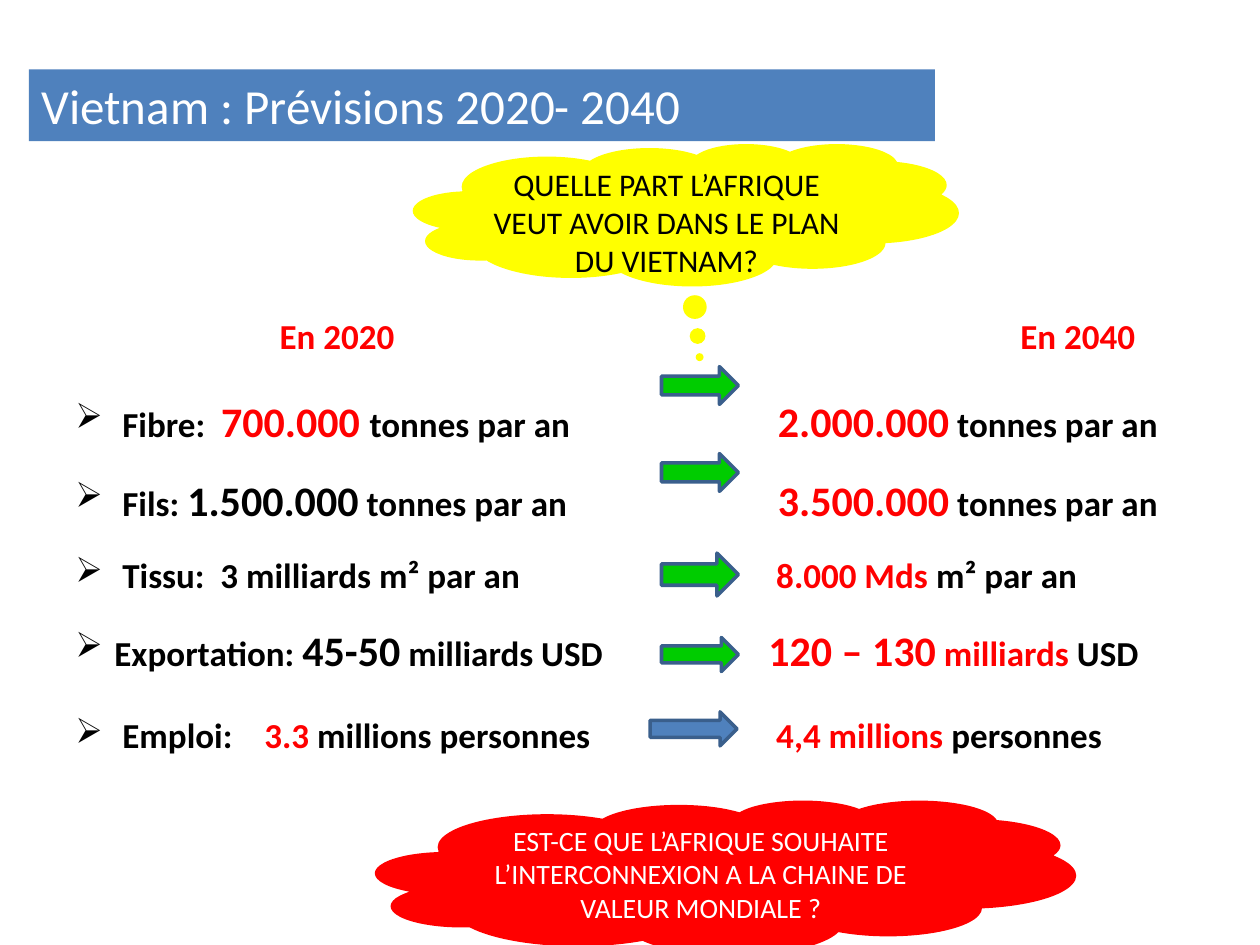
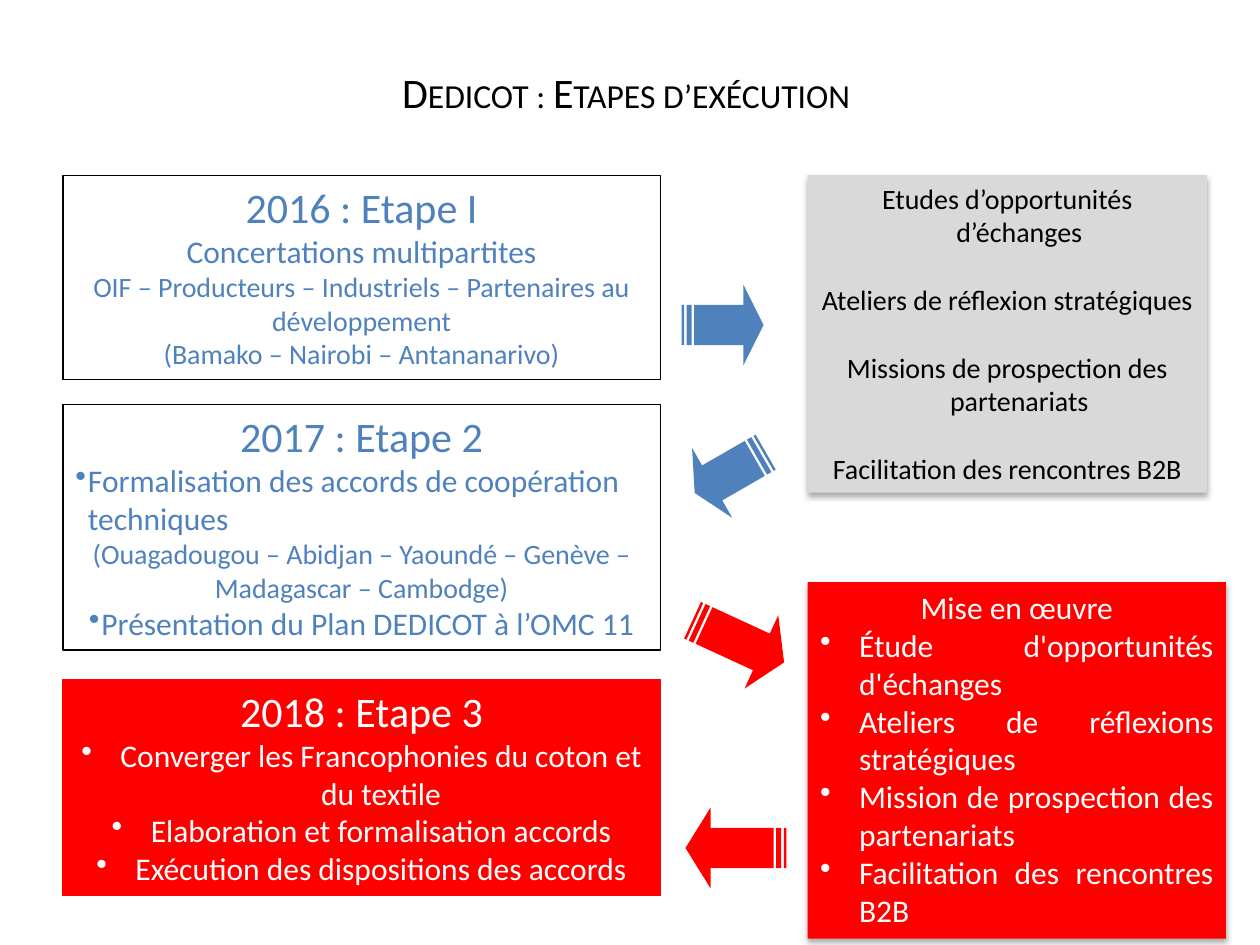
from dataclasses import dataclass

from lxml import etree
from pptx import Presentation
from pptx.dml.color import RGBColor
from pptx.enum.shapes import MSO_SHAPE
from pptx.enum.text import MSO_ANCHOR, MSO_AUTO_SIZE, PP_ALIGN
from pptx.oxml import ns
from pptx.util import Inches, Pt


@dataclass(frozen=True)
class Theme:
    font: str = "Calibri"
    black: str = "000000"
    white: str = "FFFFFF"
    red: str = "FF0000"
    blue: str = "4F81BD"
    outline: str = "3A5F8C"
    green: str = "00CC00"
    yellow: str = "FFFF00"
    grey: str = "D9D9D9"
    banner: int = 28
    heading: int = 24
    figure: int = 24
    row: int = 20
    body: int = 18
    detail: int = 16


THEME = Theme()
LEFT, CENTER, JUSTIFY = PP_ALIGN.LEFT, PP_ALIGN.CENTER, PP_ALIGN.JUSTIFY

# Forecast slide: runs are (text, colour, size)
B, R = THEME.black, THEME.red
ROW, FIGURE = THEME.row, THEME.figure
FORECAST_TITLE = "Vietnam : Prévisions 2020- 2040"
# Each column: place, year, indent of the year, format of its rows
YEAR_COLUMNS = [
    ((0, 2.39, 5.15, 3.71), "En 2020", 2.12, {"bullet": "➢", "indent": 0.81, "hanging": 0.31}),
    ((6, 2.39, 3.87, 3.71), "En 2040", 2, {}),
]
# Each row: space after, 2020 runs, 2040 runs
FORECASTS = [
    (12, [(" Fibre:  ", B, ROW), ("700.000 ", R, FIGURE), ("tonnes par an", B, ROW)],
     [(" 2.000.000", R, FIGURE), (" tonnes par an", B, ROW)]),
    (12, [(" Fils: ", B, ROW), ("1.500.000", B, FIGURE), (" tonnes par an", B, ROW)],
     [(" 3.500.000", R, FIGURE), (" tonnes par an", B, ROW)]),
    (12, [(" Tissu:  3 milliards m² par an", B, ROW)],
     [(" 8.000 Mds ", R, ROW), ("m² par an", B, ROW)]),
    (18, [("Exportation: ", B, ROW), ("45-50", B, FIGURE), (" milliards USD", B, ROW)],
     [("120 – 130", R, FIGURE), (" milliards ", R, ROW), ("USD", B, ROW)]),
    (18, [(" Emploi:\t", B, ROW), ("3.3", R, ROW), (" millions personnes", B, ROW)],
     [(" 4,4 millions ", R, ROW), ("personnes", B, ROW)]),
]
FORECAST_ARROWS = [
    ((5.25, 2.91, 0.61, 0.3), THEME.green),
    ((5.25, 3.6, 0.61, 0.3), THEME.green),
    ((5.25, 4.39, 0.61, 0.34), THEME.green),
    ((5.25, 5.06, 0.61, 0.27), THEME.green),
    ((5.16, 5.65, 0.69, 0.27), THEME.blue),
]
QUESTIONS = [
    (MSO_SHAPE.CLOUD_CALLOUT, (3.28, 1.14, 4.33, 1.13), THEME.yellow, THEME.black, THEME.body,
     "QUELLE PART L’AFRIQUE VEUT AVOIR DANS LE PLAN DU VIETNAM?", (0.025, 1.0)),
    (MSO_SHAPE.CLOUD, (2.98, 6.35, 5.56, 1.23), THEME.red, THEME.white, THEME.detail,
     "EST-CE QUE L’AFRIQUE SOUHAITE L’INTERCONNEXION A LA CHAINE DE VALEUR MONDIALE ?", ()),
]

# Steps slide: each paragraph is (text, format)
STEPS_TITLE = "Dedicot : Etapes d’exécution"
HEADING = {"size": THEME.heading, "align": CENTER}
BODY = {"size": THEME.body, "align": CENTER}
DETAIL = {"size": THEME.detail, "align": CENTER}
TIGHT_BULLET = {"size": THEME.body, "bullet": "•", "hanging": 0.1}
WIDE_BULLET = {"size": THEME.body, "bullet": "•", "hanging": 0.31}
CENTERED_BULLET = {**WIDE_BULLET, "align": CENTER}
JUSTIFIED_BULLET = {**WIDE_BULLET, "align": JUSTIFY}
ACTIVITY = {**DETAIL, "hanging": 0.19}
SPACED_ACTIVITY = {**ACTIVITY, "after": 19.5}
STEP_BOXES = [
    {"at": (0.5, 1.39, 4.74, 1.62), "line": THEME.black, "color": THEME.blue, "text": [
        ("2016 : Etape I", HEADING),
        ("Concertations multipartites", BODY),
        ("OIF – Producteurs – Industriels – Partenaires au développement", DETAIL),
        ("(Bamako – Nairobi – Antananarivo)", DETAIL)]},
    {"at": (0.5, 3.21, 4.74, 1.95), "line": THEME.black, "color": THEME.blue, "text": [
        ("2017 : Etape 2", HEADING),
        ("Formalisation des accords de coopération techniques", TIGHT_BULLET),
        ("(Ouagadougou – Abidjan – Yaoundé – Genève – Madagascar – Cambodge)", DETAIL),
        ("Présentation du Plan DEDICOT à l’OMC 11", {**TIGHT_BULLET, "align": CENTER})]},
    {"at": (0.5, 5.39, 4.74, 1.72), "fill": THEME.red, "line": THEME.red,
     "color": THEME.white, "text": [
        ("2018 : Etape 3", HEADING),
        ("Converger les Francophonies du coton et du textile", CENTERED_BULLET),
        ("Elaboration et formalisation accords", CENTERED_BULLET),
        ("Exécution des dispositions des accords", CENTERED_BULLET)]},
    {"at": (6.41, 1.39, 3.17, 2.52), "fill": THEME.grey, "shadow": True,
     "color": THEME.black, "text": [
        ("Etudes d’opportunités d’échanges", SPACED_ACTIVITY),
        ("Ateliers de réflexion stratégiques", SPACED_ACTIVITY),
        ("Missions de prospection des partenariats", SPACED_ACTIVITY),
        ("Facilitation des rencontres B2B", ACTIVITY)]},
    {"at": (6.41, 4.62, 3.32, 2.83), "fill": THEME.red, "shadow": True,
     "color": THEME.white, "text": [
        ("Mise en œuvre", {**BODY, "hanging": 0.19}),
        ("Étude d'opportunités d'échanges", JUSTIFIED_BULLET),
        ("Ateliers de réflexions stratégiques", JUSTIFIED_BULLET),
        ("Mission de prospection des partenariats", JUSTIFIED_BULLET),
        ("Facilitation des rencontres B2B", JUSTIFIED_BULLET)]},
]
# Place, rotation, head length, colour
STEP_ARROWS = [
    ((5.41, 2.26, 0.65, 0.64), 0, 0.25, THEME.blue),
    ((5.47, 3.43, 0.65, 0.64), 150.1, 0.25, THEME.blue),
    ((5.46, 4.77, 0.8, 0.64), 24.7, 0.31, THEME.red),
    ((5.44, 6.41, 0.8, 0.64), 180, 0.31, THEME.red),
]


def place(shape, at):
    shape.left, shape.top, shape.width, shape.height = map(Inches, at)


def paint(shape, fill=None, line=None, weight=0.75):
    if fill:
        shape.fill.solid()
        shape.fill.fore_color.rgb = RGBColor.from_string(fill)
    else:
        shape.fill.background()
    if line:
        shape.line.color.rgb = RGBColor.from_string(line)
        shape.line.width = Pt(weight)
    else:
        shape.line.fill.background()


def add_figure(slide, kind, at, adjustments=(), **look):
    shape = slide.shapes.add_shape(kind, *map(Inches, at))
    shape.shadow.inherit = False
    paint(shape, **look)
    for index, value in enumerate(adjustments):
        shape.adjustments[index] = value
    return shape


def add_soft_shadow(shape):
    effects = shape._element.spPr.find(ns.qn("a:effectLst"))
    shadow = etree.SubElement(effects, ns.qn("a:outerShdw"), blurRad=str(Pt(3.5)),
                              dist=str(Pt(2.2)), dir="5400000", rotWithShape="0")
    color = etree.SubElement(shadow, ns.qn("a:srgbClr"), val=THEME.black)
    etree.SubElement(color, ns.qn("a:alpha"), val="32000")


def prepare_frame(shape, anchor=MSO_ANCHOR.TOP, margins=(0.1, 0.05)):
    frame = shape.text_frame
    frame.word_wrap = True
    frame.auto_size = MSO_AUTO_SIZE.NONE
    frame.vertical_anchor = anchor
    frame.margin_left = frame.margin_right = Inches(margins[0])
    frame.margin_top = frame.margin_bottom = Inches(margins[1])
    return frame


def write(frame, runs, size=THEME.body, color=THEME.black, bold=False, align=LEFT, before=0,
          after=0, spacing=1.0, bullet=None, indent=None, hanging=0, small_caps=False):
    """Add one paragraph; runs is a string or a list of (text, colour, size)."""
    paragraph = frame.paragraphs[0]
    if paragraph.runs:
        paragraph = frame.add_paragraph()
    paragraph.alignment = align
    paragraph.line_spacing = spacing
    paragraph.space_before, paragraph.space_after = Pt(before), Pt(after)
    properties = paragraph._p.get_or_add_pPr()
    properties.set("marL", str(Inches(hanging if indent is None else indent)))
    properties.set("indent", str(-Inches(hanging)))
    if bullet:
        etree.SubElement(properties, ns.qn("a:buChar"), char=bullet)
    else:
        etree.SubElement(properties, ns.qn("a:buNone"))
    if isinstance(runs, str):
        runs = [(runs, color, size)]
    for content, run_color, run_size in runs:
        run = paragraph.add_run()
        run.text = content
        run.font.name = THEME.font
        run.font.size = Pt(run_size)
        run.font.bold = bold
        run.font.color.rgb = RGBColor.from_string(run_color)
        if small_caps:
            run.font._element.set("cap", "small")


def add_titled_slide(presentation, title, at, fill=None, anchor=MSO_ANCHOR.TOP, **style):
    slide = presentation.slides.add_slide(presentation.slide_layouts[5])
    placeholder = slide.shapes.title
    place(placeholder, at)
    paint(placeholder, fill)
    write(prepare_frame(placeholder, anchor), title, **style)
    return slide


def build_forecasts(presentation):
    slide = add_titled_slide(presentation, FORECAST_TITLE, (0.23, 0.55, 7.19, 0.57),
                             fill=THEME.blue, size=THEME.banner, color=THEME.white)
    for column, (at, year, indent, row_style) in enumerate(YEAR_COLUMNS):
        panel = add_figure(slide, MSO_SHAPE.RECTANGLE, at, fill=THEME.white)
        frame = prepare_frame(panel, MSO_ANCHOR.MIDDLE)
        write(frame, year, size=ROW, color=THEME.red, bold=True, after=18, indent=indent)
        for after, *forecasts in FORECASTS:
            write(frame, forecasts[column], bold=True, before=4.4, after=after, **row_style)
    for at, color in FORECAST_ARROWS:
        add_figure(slide, MSO_SHAPE.RIGHT_ARROW, at, fill=color, line=THEME.outline, weight=2)
    for kind, at, fill, color, size, question, adjustments in QUESTIONS:
        cloud = add_figure(slide, kind, at, adjustments, fill=fill)
        write(prepare_frame(cloud, margins=(0, 0)), question, size=size, color=color,
              align=CENTER)


def build_steps(presentation):
    slide = add_titled_slide(presentation, STEPS_TITLE, (0.37, 0.52, 9.2, 0.47),
                             anchor=MSO_ANCHOR.MIDDLE, size=THEME.heading, align=CENTER,
                             spacing=0.9, small_caps=True)
    for step in STEP_BOXES:
        box = add_figure(slide, MSO_SHAPE.RECTANGLE, step["at"],
                         fill=step.get("fill"), line=step.get("line"))
        if step.get("shadow"):
            add_soft_shadow(box)
        frame = prepare_frame(box)
        for content, style in step["text"]:
            write(frame, content, color=step["color"], **style)
    for at, rotation, head, color in STEP_ARROWS:
        arrow = add_figure(slide, MSO_SHAPE.STRIPED_RIGHT_ARROW, at, (0.5, head), fill=color)
        arrow.rotation = rotation


def main():
    presentation = Presentation()
    presentation.slide_width, presentation.slide_height = Inches(10), Inches(7.5)
    build_forecasts(presentation)
    build_steps(presentation)
    presentation.save("out.pptx")


if __name__ == "__main__":
    main()
